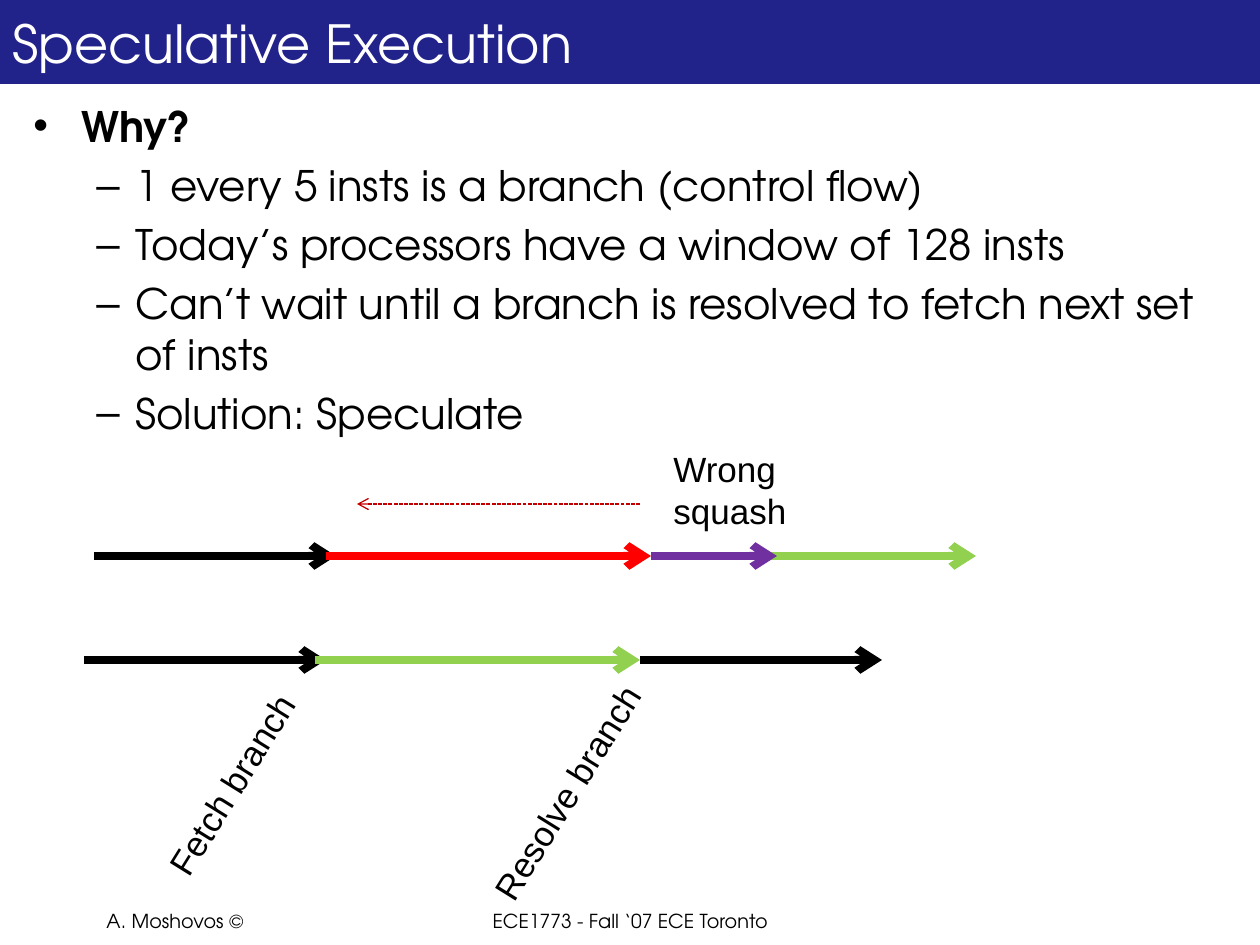
from lxml.etree import SubElement
from pptx import Presentation
from pptx.dml.color import RGBColor
from pptx.enum.dml import MSO_LINE
from pptx.enum.shapes import MSO_CONNECTOR, MSO_SHAPE
from pptx.enum.text import MSO_ANCHOR, PP_ALIGN
from pptx.oxml.ns import qn
from pptx.util import Emu, Pt

COLOURS = {
    "navy": "22228B",
    "white": "FFFFFF",
    "black": "000000",
    "green": "92D050",
    "red": "FF0000",
    "dark red": "C00000",
    "purple": "7030A0",
}
HEADING_FONT = "TeX Gyre Adventor"
LABEL_FONT = "Arial"


def px(length):
    return Emu(round(length * 914400 / 126))


def colour(name):
    return RGBColor.from_string(COLOURS[name])


class SlideBuilder:
    def __init__(self, deck):
        self.slide = deck.slides.add_slide(deck.slide_layouts[6])

    def add_span(self, para, text, size, font, ink="black", bold=False):
        span = para.add_run()
        span.text = text
        span.font.size = Pt(size)
        span.font.name = font
        span.font.bold = bold
        span.font.color.rgb = colour(ink)

    def title(self, text, width, height):
        bar = self.slide.shapes.add_shape(
            MSO_SHAPE.RECTANGLE, 0, 0, px(width), px(height))
        bar.shadow.inherit = False
        bar.fill.solid()
        bar.fill.fore_color.rgb = colour("navy")
        bar.line.fill.background()
        bar.text_frame.vertical_anchor = MSO_ANCHOR.MIDDLE
        bar.text_frame.word_wrap = True
        para = bar.text_frame.paragraphs[0]
        para.alignment = PP_ALIGN.LEFT
        self.add_span(para, text, 30, HEADING_FONT, "white")

    def text(self, lines, left, top, width, height, size, font,
             align=PP_ALIGN.LEFT, wrap=True, rotation=0):
        box = self.slide.shapes.add_textbox(
            px(left), px(top), px(width), px(height))
        box.rotation = rotation
        frame = box.text_frame
        frame.word_wrap = wrap
        for index, line in enumerate(lines):
            para = frame.add_paragraph() if index else frame.paragraphs[0]
            para.alignment = align
            self.add_span(para, line, size, font)

    def bullets(self, items, left, top, width, height):
        """Place (level, text) items; the top level is bold."""
        styles = [("•", 48, 48), ("–", 102, 39)]
        box = self.slide.shapes.add_textbox(
            px(left), px(top), px(width), px(height))
        frame = box.text_frame
        frame.word_wrap = True
        for index, (level, line) in enumerate(items):
            mark, margin, hanging = styles[level]
            para = frame.add_paragraph() if index else frame.paragraphs[0]
            para.level = level
            para.space_before = Pt(5)
            properties = para._p.get_or_add_pPr()
            properties.set("marL", str(px(margin)))
            properties.set("indent", str(-px(hanging)))
            SubElement(properties, qn("a:buFont"), typeface=LABEL_FONT)
            SubElement(properties, qn("a:buChar"), char=mark)
            self.add_span(para, line, 24, HEADING_FONT, bold=level == 0)

    def arrow(self, start, end, y, ink, weight=4.5, dash=None):
        line = self.slide.shapes.add_connector(
            MSO_CONNECTOR.STRAIGHT, px(start), px(y), px(end), px(y))
        line.line.color.rgb = colour(ink)
        line.line.width = Pt(weight)
        if dash:
            line.line.dash_style = dash
        SubElement(line.line._get_or_add_ln(), qn("a:tailEnd"), type="arrow")
        SubElement(line._element.spPr, qn("a:effectLst"))


def main():
    deck = Presentation()
    deck.slide_width, deck.slide_height = px(1260), px(945)
    page = SlideBuilder(deck)

    page.title("Speculative Execution", 1260, 84)
    page.bullets([
        (0, "Why?"),
        (1, "1 every 5 insts is a branch (control flow)"),
        (1, "Today’s processors have a window of 128 insts"),
        (1, "Can’t wait until a branch is resolved to fetch next set of insts"),
        (1, "Solution: Speculate"),
    ], 21, 94, 1218, 357)

    page.text(["A. Moshovos ©"], 94, 903, 262, 53, 11, HEADING_FONT)
    page.text(["ECE1773 - Fall ‘07 ECE Toronto"], 410, 903, 441, 53, 11,
              HEADING_FONT, align=PP_ALIGN.CENTER)

    timelines = {
        660: [(84, 326, "black"), (315, 640, "green"), (640, 882, "black")],
        556: [(94, 336, "black"), (326, 651, "red"),
              (725, 976, "green"), (651, 777, "purple")],
    }
    for y, stages in timelines.items():
        for start, end, ink in stages:
            page.arrow(start, end, y, ink)
    page.arrow(640, 357, 504, "dark red", 0.75, MSO_LINE.SQUARE_DOT)

    for label, left, top, width in [("Fetch branch", 116, 756, 232),
                                    ("Resolve branch", 432, 764, 271)]:
        page.text([label], left, top, width, 55, 20, LABEL_FONT,
                  wrap=False, rotation=301.9)
    page.text(["Wrong", "squash"], 661, 441, 140, 97, 20, LABEL_FONT,
              wrap=False)

    deck.save("out.pptx")


if __name__ == "__main__":
    main()
